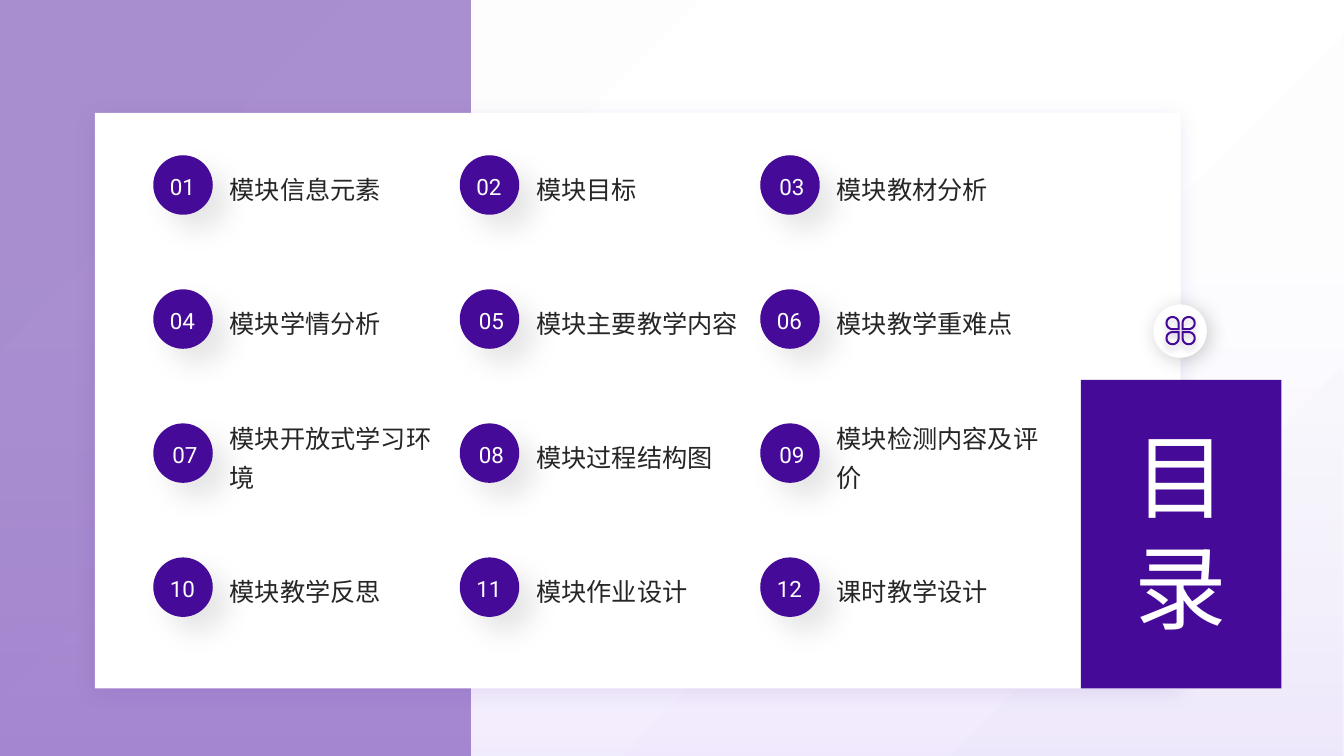
import math
from dataclasses import dataclass
from typing import Optional

from pptx import Presentation
from pptx import util as u
from pptx.dml.color import RGBColor
from pptx.enum import shapes, text
from pptx.oxml import parse_xml
from pptx.oxml.ns import nsdecls, qn

PX = 9144  # EMU per px, 100 px to the inch
FONT = "Roboto"
PURPLE = RGBColor(0x45, 0x0B, 0x98)
DEEP_PURPLE = RGBColor(0x22, 0x05, 0x4C)
LILAC = RGBColor(0xD7, 0xBE, 0xFA)
VIOLET = RGBColor(0xAF, 0x7E, 0xF6)
MIST = RGBColor(0xFA, 0xFB, 0xFC)
WHITE = RGBColor(0xFF, 0xFF, 0xFF)
BLACK = RGBColor(0, 0, 0)
INK = RGBColor(0x26, 0x26, 0x26)


@dataclass(frozen=True)
class Box:
    x: int
    y: int
    w: int
    h: int

    def emu(self) -> tuple:
        return tuple(v * PX for v in (self.x, self.y, self.w, self.h))


@dataclass(frozen=True)
class Shadow:
    color: RGBColor
    alpha: int
    blur: int
    dist: int
    angle: int


@dataclass(frozen=True)
class Stop:
    pos: int
    color: RGBColor
    alpha: int = 100


@dataclass(frozen=True)
class Entry:
    label: str
    number_w: int = 50


ENTRIES = [
    Entry("模块信息元素"), Entry("模块目标"), Entry("模块教材分析", 55),
    Entry("模块学情分析"), Entry("模块主要教学内容", 55), Entry("模块教学重难点"),
    Entry("模块开放式学习环境", 55), Entry("模块过程结构图", 55), Entry("模块检测内容及评价", 55),
    Entry("模块教学反思"), Entry("模块作业设计"), Entry("课时教学设计"),
]
COLUMNS = (152, 456, 754)
ROW_TOP, ROW_PITCH = 154, 133
DISC_SHADOW = Shadow(BLACK, 10, 20, 15, 45)


def color_xml(color: RGBColor, alpha: int) -> str:
    return f'<a:srgbClr val="{color}"><a:alpha val="{alpha * 1000}"/></a:srgbClr>'


def set_gradient(fill, parent, stops: list[Stop], angle: int) -> None:
    """Swap a solid fill under parent for a linear gradient."""
    fill.solid()
    solid = parent.find(".//" + qn("a:solidFill"))
    gs = "".join(f'<a:gs pos="{st.pos * 1000}">{color_xml(st.color, st.alpha)}</a:gs>'
                 for st in stops)
    solid.getparent().replace(solid, parse_xml(
        f'<a:gradFill {nsdecls("a")} rotWithShape="1"><a:gsLst>{gs}</a:gsLst>'
        f'<a:lin ang="{angle * 60000}" scaled="0"/></a:gradFill>'))


def style(sp, color: RGBColor, alpha: int = 100, shadow: Optional[Shadow] = None) -> None:
    """Plain fill without outline, with an optional outer shadow."""
    sp.fill.solid()
    sp.fill.fore_color.rgb = color
    sp.line.fill.background()
    sp.shadow.inherit = False
    pr = sp._element.spPr
    if alpha < 100:
        clr = pr.find(qn("a:solidFill")).find(qn("a:srgbClr"))
        clr.append(parse_xml(f'<a:alpha {nsdecls("a")} val="{alpha * 1000}"/>'))
    if shadow:
        pr.find(qn("a:effectLst")).append(parse_xml(
            f'<a:outerShdw {nsdecls("a")} blurRad="{u.Pt(shadow.blur)}" '
            f'dist="{u.Pt(shadow.dist)}" dir="{shadow.angle * 60000}" algn="ctr" '
            f'rotWithShape="0">{color_xml(shadow.color, shadow.alpha)}</a:outerShdw>'))


def add_rect(s, box: Box, color: RGBColor, **fmt):
    sp = s.shapes.add_shape(shapes.MSO_SHAPE.RECTANGLE, *box.emu())
    style(sp, color, **fmt)
    return sp


def add_disc(s, x: int, y: int, d: int, color: RGBColor, shadow: Shadow) -> None:
    sp = s.shapes.add_shape(shapes.MSO_SHAPE.OVAL, *Box(x, y, d, d).emu())
    style(sp, color, shadow=shadow)


def add_text(s, box: Box, words: str, *, size: int, color: RGBColor,
             align=text.PP_ALIGN.LEFT, anchor=text.MSO_ANCHOR.MIDDLE,
             spacing: Optional[float] = None, inset: bool = True) -> None:
    tf = s.shapes.add_textbox(*box.emu()).text_frame
    tf.word_wrap = True
    tf.vertical_anchor = anchor
    if not inset:
        tf.margin_left = tf.margin_top = tf.margin_right = tf.margin_bottom = 0
    p = tf.paragraphs[0]
    p.alignment = align
    if spacing:
        p.line_spacing = spacing
    r = p.add_run()
    r.text = words
    r.font.name, r.font.size, r.font.color.rgb = FONT, u.Pt(size), color


def petal(cx: int, cy: int, dx: int, dy: int, radius: int) -> list[tuple]:
    """Three quarters of a circle, closed by a square corner facing inwards."""
    arc = [(cx + dx * radius * math.cos(math.radians(t)),
            cy + dy * radius * math.sin(math.radians(t))) for t in range(-90, 181, 10)]
    return arc + [(cx - dx * radius, cy - dy * radius)]


def add_clover(s, cx: int, cy: int) -> None:
    """Four outlined petals, drawn in tenths of a px."""
    outlines = [petal(cx * 10 + dx * 80, cy * 10 + dy * 75, dx, dy, radius)
                for dx in (-1, 1) for dy in (-1, 1) for radius in (70, 50)]
    fb = s.shapes.build_freeform(*outlines[0][0], scale=PX / 10)
    for i, points in enumerate(outlines):
        if i:
            fb.move_to(*points[0])
        fb.add_line_segments(points[1:], close=True)
    style(fb.convert_to_shape(), PURPLE, shadow=Shadow(DEEP_PURPLE, 19, 4, 3, 90))


def add_entry(s, index: int, entry: Entry) -> None:
    row, col = divmod(index, len(COLUMNS))
    x, y = COLUMNS[col], ROW_TOP + row * ROW_PITCH
    add_text(s, Box(x + 66, y - 21, 228, 101), entry.label, size=18, color=INK, spacing=1.3)
    add_disc(s, x, y, 59, PURPLE, DISC_SHADOW)
    add_text(s, Box(x + 4, y + 9, entry.number_w, 41), f"{index + 1:02d}", size=16,
             color=WHITE, align=text.PP_ALIGN.CENTER, spacing=1.1)


def main() -> None:
    prs = Presentation()
    prs.slide_width, prs.slide_height = 1333 * PX, 750 * PX
    s = prs.slides.add_slide(prs.slide_layouts[6])

    # Background, violet wash and left band
    set_gradient(s.background.fill, s._element,
                 [Stop(0, MIST), Stop(50, WHITE), Stop(97, MIST)], 45)
    wash = add_rect(s, Box(0, 0, 1333, 750), WHITE)
    set_gradient(wash.fill, wash._element.spPr, [Stop(35, LILAC, 0), Stop(100, VIOLET, 15)], 90)
    add_rect(s, Box(0, 0, 467, 750), PURPLE, alpha=45)

    # Card and title block
    add_rect(s, Box(94, 112, 1077, 571), WHITE, shadow=Shadow(PURPLE, 10, 15, 3, 90))
    add_rect(s, Box(1072, 377, 199, 306), PURPLE)
    add_text(s, Box(1103, 416, 136, 222), "目录", size=66, color=WHITE, inset=False,
             align=text.PP_ALIGN.CENTER, anchor=text.MSO_ANCHOR.TOP)

    # Clover badge
    add_disc(s, 1144, 302, 53, WHITE, Shadow(BLACK, 20, 15, 3, 45))
    add_clover(s, 1171, 328)

    # Contents grid
    for index, entry in enumerate(ENTRIES):
        add_entry(s, index, entry)

    prs.save("out.pptx")


if __name__ == "__main__":
    main()
